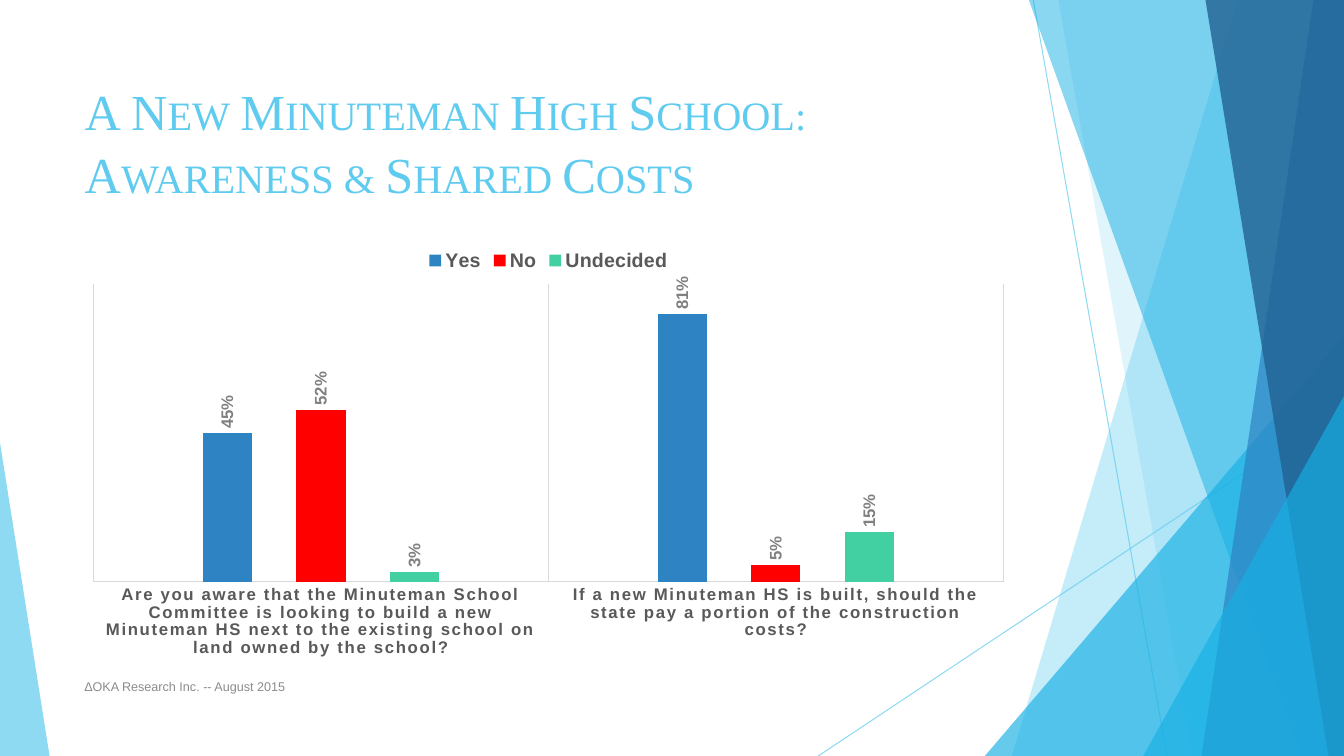
from dataclasses import dataclass

from lxml import etree
from pptx import Presentation
from pptx.chart.data import CategoryChartData
from pptx.dml.color import RGBColor
from pptx.enum.chart import XL_CHART_TYPE, XL_LABEL_POSITION, XL_LEGEND_POSITION, XL_TICK_MARK
from pptx.enum.shapes import MSO_CONNECTOR, MSO_SHAPE
from pptx.enum.text import MSO_ANCHOR, PP_ALIGN
from pptx.oxml.ns import qn
from pptx.util import Cm, Pt

COLUMNS = XL_CHART_TYPE.COLUMN_CLUSTERED
OUTSIDE_END = XL_LABEL_POSITION.OUTSIDE_END
LEGEND_TOP = XL_LEGEND_POSITION.TOP
NO_TICK = XL_TICK_MARK.NONE
STRAIGHT = MSO_CONNECTOR.STRAIGHT
TRIANGLE = MSO_SHAPE.ISOSCELES_TRIANGLE
MIDDLE = MSO_ANCHOR.MIDDLE
LEFT = PP_ALIGN.LEFT


@dataclass(frozen=True)
class Theme:
    sky: str = "5FCBEF"
    cyan: str = "17B0E4"
    blue: str = "2E83C3"
    navy: str = "226292"
    red: str = "FF0000"
    green: str = "42D0A2"
    text: str = "595959"
    label: str = "808080"
    footer: str = "8C8C8C"
    grid: str = "D9D9D9"
    title_font: str = "Times New Roman"
    body_font: str = "Arial"
    title_size: float = 36
    legend_size: float = 14
    chart_size: float = 12
    footer_size: float = 9


@dataclass(frozen=True)
class Ray:
    start: tuple[float, float]
    end: tuple[float, float]


@dataclass(frozen=True)
class Band:
    """Four-sided band from the top edge to the bottom edge, flush right."""
    top: float
    bottom: float
    color: str
    opacity: int


@dataclass(frozen=True)
class Corner:
    """Right-angled triangle standing on the bottom edge."""
    left: float
    top: float
    width: float
    apex: float
    color: str
    opacity: int


@dataclass(frozen=True)
class Answer:
    name: str
    values: tuple[float, float]
    color: str


THEME = Theme()
WIDTH, HEIGHT = 33.87, 19.05
MARGIN, CONTENT_WIDTH = 1.88, 23.88

DECORATION = [
    Ray((26.04, 0), (29.41, HEIGHT)),
    Ray((WIDTH, 10.24), (20.62, HEIGHT)),
    Band(31.19, 25.5, THEME.sky, 36),
    Band(26.67, 30.05, THEME.sky, 20),
    Corner(24.82, 8.46, 9.05, 1, THEME.cyan, 66),
    Band(25.93, 32.79, THEME.cyan, 50),
    Band(33.1, 30.28, THEME.blue, 70),
    Band(30.38, 33.48, THEME.navy, 80),
    Corner(28.81, 9.98, 5.06, 1, THEME.cyan, 66),
    Corner(0, 11.15, 1.25, 0, THEME.sky, 70),
]

QUESTIONS = [
    "Are you aware that the Minuteman School Committee is looking to build a new "
    "Minuteman HS next to the existing school on land owned by the school?",
    "If a new Minuteman HS is built, should the state pay a portion of the construction costs?",
]
ANSWERS = [
    Answer("Yes", (0.45, 0.81), THEME.blue),
    Answer("No", (0.52, 0.05), THEME.red),
    Answer("Undecided", (0.03, 0.15), THEME.green),
]


def rgb(color: str) -> RGBColor:
    return RGBColor.from_string(color)


def set_font(font, size: float, color: str, name: str = THEME.body_font, bold: bool = False) -> None:
    font.name, font.size, font.bold = name, Pt(size), bold
    font.color.rgb = rgb(color)


def write(tf, text: str, *, size: float, color: str, name: str = THEME.body_font,
          small_caps: bool = False, spacing: float = 1.0) -> None:
    tf.word_wrap, tf.vertical_anchor = True, MIDDLE
    p = tf.paragraphs[0]
    p.alignment, p.line_spacing = LEFT, spacing
    r = p.add_run()
    r.text = text
    set_font(r.font, size, color, name)
    if small_caps:
        r.font._element.set("cap", "small")


def set_opacity(shape, percent: int) -> None:
    color = next(shape.element.spPr.iter(qn("a:srgbClr")))
    etree.SubElement(color, qn("a:alpha")).set("val", str(percent * 1000))


def draw_ray(s, ray: Ray) -> None:
    line = s.shapes.add_connector(STRAIGHT, *map(Cm, ray.start + ray.end))
    line.line.color.rgb = rgb(THEME.sky)
    line.line.width = Pt(0.75)
    set_opacity(line, 70)
    etree.SubElement(line.element.spPr, qn("a:effectLst"))


def draw_facet(s, facet: Band | Corner) -> None:
    if isinstance(facet, Band):
        outline = s.shapes.build_freeform(Cm(facet.top), 0)
        corners = [(WIDTH, 0), (WIDTH, HEIGHT), (facet.bottom, HEIGHT)]
        outline.add_line_segments([(Cm(x), Cm(y)) for x, y in corners])
        sp = outline.convert_to_shape()
    else:
        sp = s.shapes.add_shape(TRIANGLE, Cm(facet.left), Cm(facet.top),
                                Cm(facet.width), Cm(HEIGHT - facet.top))
        sp.adjustments[0] = facet.apex
    sp.shadow.inherit = False
    sp.fill.solid()
    sp.fill.fore_color.rgb = rgb(facet.color)
    sp.line.fill.background()
    set_opacity(sp, facet.opacity)


def add_answers_chart(s) -> None:
    data = CategoryChartData(number_format="0%")
    data.categories = QUESTIONS
    for answer in ANSWERS:
        data.add_series(answer.name, answer.values)
    chart = s.shapes.add_chart(COLUMNS, Cm(MARGIN), Cm(6), Cm(CONTENT_WIDTH), Cm(10.77), data).chart
    set_font(chart.font, THEME.chart_size, THEME.text)
    chart.has_title = False
    chart.has_legend = True
    chart.legend.position = LEGEND_TOP
    chart.legend.include_in_layout = False
    set_font(chart.legend.font, THEME.legend_size, THEME.text, bold=True)

    # Axes
    axis = chart.category_axis
    axis.major_tick_mark = axis.minor_tick_mark = NO_TICK
    axis.has_major_gridlines = True
    for line in (axis.format.line, axis.major_gridlines.format.line):
        line.color.rgb = rgb(THEME.grid)
        line.width = Pt(0.75)
    set_font(axis.tick_labels.font, THEME.chart_size, THEME.text, bold=True)
    axis.tick_labels.font._element.set("spc", "120")
    chart.value_axis.visible = False
    chart.value_axis.has_major_gridlines = False
    chart.value_axis.minimum_scale, chart.value_axis.maximum_scale = 0, 0.9

    # Columns with upright labels
    plot = chart.plots[0]
    plot.gap_width, plot.overlap, plot.vary_by_categories = 444, -90, False
    for series, answer in zip(plot.series, ANSWERS):
        series.format.fill.solid()
        series.format.fill.fore_color.rgb = rgb(answer.color)
        labels = series.data_labels
        labels.show_value, labels.position = True, OUTSIDE_END
        labels.number_format, labels.number_format_is_linked = "0%", False
        set_font(labels.font, THEME.chart_size, THEME.label, bold=True)
        body = next(labels._element.iter(qn("a:bodyPr")))
        body.set("rot", "-5400000")
        body.set("vert", "horz")


def main() -> None:
    prs = Presentation()
    prs.slide_width, prs.slide_height = Cm(WIDTH), Cm(HEIGHT)
    s = prs.slides.add_slide(prs.slide_layouts[5])

    # Background facets
    for item in DECORATION:
        if isinstance(item, Ray):
            draw_ray(s, item)
        else:
            draw_facet(s, item)

    # Title, chart and footer
    title = s.shapes.title
    title.left, title.top, title.width, title.height = Cm(MARGIN), Cm(1.7), Cm(CONTENT_WIDTH), Cm(3.66)
    write(title.text_frame, "A New Minuteman High School: Awareness & Shared Costs",
          size=THEME.title_size, color=THEME.sky, name=THEME.title_font, small_caps=True, spacing=1.05)
    add_answers_chart(s)
    footer = s.shapes.add_textbox(Cm(MARGIN), Cm(16.79), Cm(17.5), Cm(1.02))
    write(footer.text_frame, "ΔΟΚΑ Research Inc. -- August 2015",
          size=THEME.footer_size, color=THEME.footer)

    prs.save("out.pptx")


if __name__ == "__main__":
    main()
